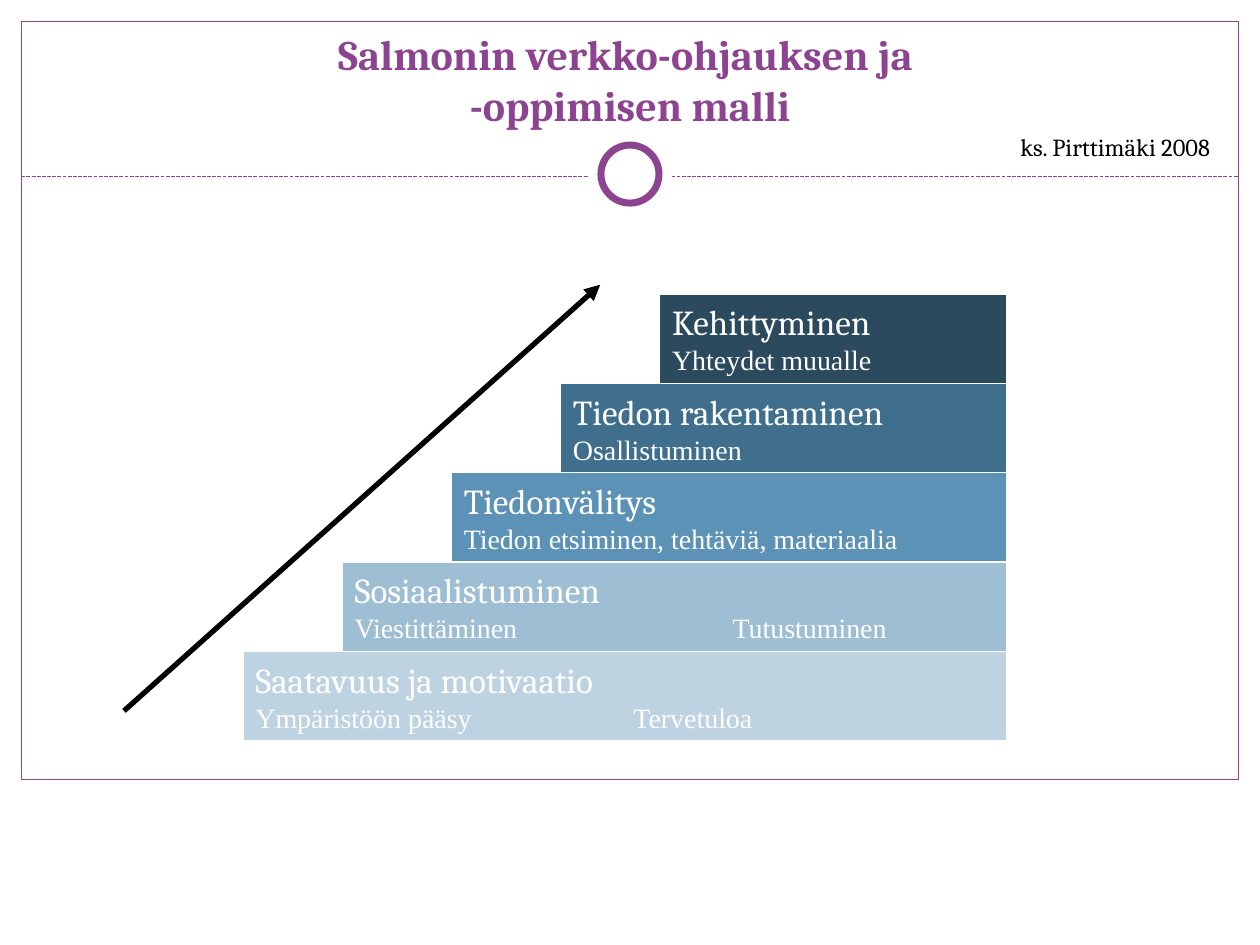
"""Build the slide on Salmon's five-step model of online tutoring and learning."""
import pptx
import pptx.util
import pptx.dml.color
import pptx.enum.dml
import pptx.enum.shapes
import pptx.enum.text
import pptx.oxml.ns
import lxml.etree

Cm, Pt = pptx.util.Cm, pptx.util.Pt
SHAPE = pptx.enum.shapes.MSO_SHAPE
TEXT = pptx.enum.text

TITLE = "Salmonin verkko-ohjauksen ja \v-oppimisen malli"
CITATION = "ks. Pirttimäki 2008"
# heading, activities, left edge in cm, fill
STEPS = [
    ("Saatavuus ja motivaatio", "Ympäristöön pääsy\tTervetuloa", 4.9, "BED3E1"),
    ("Sosiaalistuminen", "Viestittäminen\tTutustuminen", 6.9, "9DBED3"),
    ("Tiedonvälitys", "Tiedon etsiminen, tehtäviä, materiaalia", 9.1, "5C92B5"),
    ("Tiedon rakentaminen", "Osallistuminen", 11.3, "406F8D"),
    ("Kehittyminen", "Yhteydet muualle", 13.3, "2B4A5E"),
]
THEME = {
    "accent": "8D4490", "white": "FFFFFF", "black": "000000",
    "heading_font": "Cambria", "body_font": "Times New Roman",
    "title": 24, "heading": 20, "activity": 16, "citation": 14,
}
SLIDE_W, SLIDE_H = 25.4, 19.05
MARGIN, FRAME_H = 0.43, 15.29
RULE_Y, RING_Y = 3.56, 3.51
STAIRS_RIGHT, STAIRS_BOTTOM, STEP_H = 20.3, 14.93, 1.8
TAB_STOP = 7.62


def rgb(value):
    return pptx.dml.color.RGBColor.from_string(value)


def style(paragraph, size, color, face=THEME["heading_font"], bold=False):
    for run in paragraph.runs:
        run.font.name, run.font.size, run.font.bold = face, Pt(size), bold
        run.font.color.rgb = rgb(color)


def add_box(slide, kind, left, top, width, height, fill=None, line=None, weight=0.75):
    box = slide.shapes.add_shape(kind, Cm(left), Cm(top), Cm(width), Cm(height))
    box.shadow.inherit = False
    if fill:
        box.fill.solid()
        box.fill.fore_color.rgb = rgb(fill)
    else:
        box.fill.background()
    if line:
        box.line.color.rgb = rgb(line)
        box.line.width = Pt(weight)
    else:
        box.line.fill.background()
    return box


def add_line(slide, start, end, color, weight):
    line = slide.shapes.add_connector(
        pptx.enum.shapes.MSO_CONNECTOR.STRAIGHT, *map(Cm, start + end))
    line.line.color.rgb = rgb(color)
    line.line.width = Pt(weight)
    lxml.etree.SubElement(line._element.spPr, pptx.oxml.ns.qn("a:effectLst"))
    return line


def add_frame(slide):
    accent, white = THEME["accent"], THEME["white"]
    add_box(slide, SHAPE.RECTANGLE, MARGIN, MARGIN, SLIDE_W - 2 * MARGIN, FRAME_H, line=accent)
    rule = add_line(slide, (MARGIN, RULE_Y), (SLIDE_W - MARGIN, RULE_Y), accent, 0.75)
    rule.line.dash_style = pptx.enum.dml.MSO_LINE.SQUARE_DOT
    for diameter, outline in ((1.7, None), (1.17, accent)):
        add_box(slide, SHAPE.OVAL, (SLIDE_W - diameter) / 2, RING_Y - diameter / 2,
                diameter, diameter, white, outline, 4)


def add_step(slide, index, heading, activities, left, fill):
    white = THEME["white"]
    step = add_box(slide, SHAPE.RECTANGLE, left, STAIRS_BOTTOM - (index + 1) * STEP_H,
                   STAIRS_RIGHT - left, STEP_H, fill, white)
    frame = step.text_frame
    frame.text = f"{heading}\n{activities}"
    frame.vertical_anchor = TEXT.MSO_ANCHOR.MIDDLE
    for paragraph in frame.paragraphs:
        paragraph.alignment = TEXT.PP_ALIGN.LEFT
    heading_line, activity_line = frame.paragraphs
    if "\t" in activities:
        tabs = lxml.etree.SubElement(
            activity_line._p.get_or_add_pPr(), pptx.oxml.ns.qn("a:tabLst"))
        lxml.etree.SubElement(tabs, pptx.oxml.ns.qn("a:tab"), pos=str(Cm(TAB_STOP)), algn="l")
    style(heading_line, THEME["heading"], white)
    style(activity_line, THEME["activity"], white, THEME["body_font"])


def add_text(slide, text, left, top, width, height, size, color, bold=False):
    box = slide.shapes.add_textbox(Cm(left), Cm(top), Cm(width), Cm(height))
    box.text_frame.text = text
    box.text_frame.word_wrap = True
    style(box.text_frame.paragraphs[0], size, color, bold=bold)
    return box.text_frame


def main():
    deck = pptx.Presentation()
    deck.slide_width, deck.slide_height = Cm(SLIDE_W), Cm(SLIDE_H)
    slide = deck.slides.add_slide(deck.slide_layouts[6])
    add_frame(slide)
    for index, step in enumerate(STEPS):
        add_step(slide, index, *step)
    growth = add_line(slide, (2.5, 14.33), (12.1, 5.74), THEME["black"], 3)
    lxml.etree.SubElement(growth.line._get_or_add_ln(), pptx.oxml.ns.qn("a:tailEnd"),
                          type="triangle")
    title = add_text(slide, TITLE, 0.85, 0.64, 23.7, 2.1, THEME["title"], THEME["accent"], True)
    title.vertical_anchor = TEXT.MSO_ANCHOR.BOTTOM
    title.paragraphs[0].alignment = TEXT.PP_ALIGN.CENTER
    citation = add_text(slide, CITATION, 20.32, 2.54, 4.55, 0.85,
                        THEME["citation"], THEME["black"])
    citation.word_wrap = False
    citation.auto_size = TEXT.MSO_AUTO_SIZE.SHAPE_TO_FIT_TEXT
    deck.save("out.pptx")


if __name__ == "__main__":
    main()
